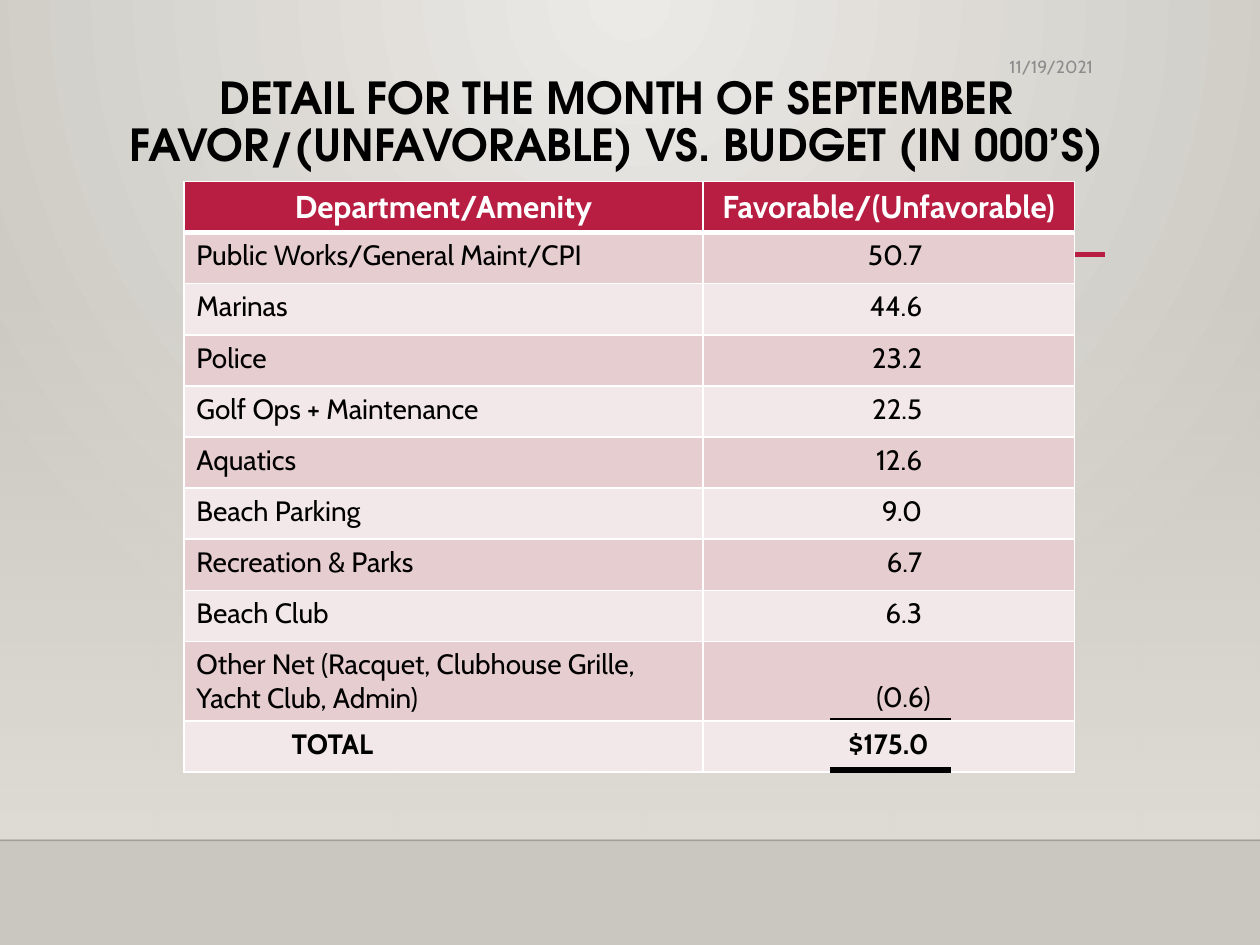
from lxml import etree
from pptx import Presentation
from pptx import util as u
from pptx.dml.color import RGBColor
from pptx.enum import shapes, text
from pptx.oxml.ns import qn

BLACK = RGBColor(0x00, 0x00, 0x00)
NEAR_BLACK = RGBColor(0x00, 0x00, 0x01)
WHITE = RGBColor(0xFF, 0xFF, 0xFF)
GREY = RGBColor(0x8C, 0x8C, 0x8C)
RED = RGBColor(0xB7, 0x1E, 0x42)
ROSE = RGBColor(0xE6, 0xCD, 0xCF)
PALE_ROSE = RGBColor(0xF3, 0xE8, 0xE9)
LIGHT = RGBColor(0xEC, 0xEA, 0xE7)
STONE = RGBColor(0xCA, 0xC7, 0xC1)
SAND = RGBColor(0xDF, 0xDB, 0xD5)

LEFT, CENTER, RIGHT = (text.PP_ALIGN.LEFT, text.PP_ALIGN.CENTER,
                       text.PP_ALIGN.RIGHT)
TOP, MIDDLE, BOTTOM = (text.MSO_ANCHOR.TOP, text.MSO_ANCHOR.MIDDLE,
                       text.MSO_ANCHOR.BOTTOM)

TITLE = ["DETAIL FOR THE MONTH OF SEPTEMBER",
         "FAVOR/(UNFAVORABLE) VS. BUDGET (IN 000’S)"]
HEADER = ["Department/Amenity", "Favorable/(Unfavorable)"]
DEPARTMENTS = [
    ("Public Works/General Maint/CPI", "50.7"),
    ("Marinas", "44.6"),
    ("Police", "23.2"),
    ("Golf Ops + Maintenance", "22.5"),
    ("Aquatics", "12.6"),
    ("Beach Parking", "9.0"),
    ("Recreation & Parks", "6.7"),
    ("Beach Club", "6.3"),
    ("Other Net (Racquet, Clubhouse Grille, Yacht Club, Admin)", "(0.6)"),
]
TOTAL = ("TOTAL", "$175.0")


def write(tf, content, size=16, color=BLACK, bold=False, font="Cabin",
          align=LEFT, spacing=None):
    lines = [content] if isinstance(content, str) else content
    for i, line in enumerate(lines):
        p = tf.paragraphs[0] if i == 0 else tf.add_paragraph()
        p.alignment = align
        p.space_before = u.Pt(0)
        if spacing:
            p.line_spacing = spacing
        r = p.add_run()
        r.text = line
        r.font.name, r.font.size, r.font.bold = font, u.Pt(size), bold
        r.font.color.rgb = color


def set_alpha(parent, percent):
    """Make the first RGB colour under parent partly transparent."""
    color = parent.find(".//" + qn("a:srgbClr"))
    etree.SubElement(color, qn("a:alpha")).set("val", str(percent * 1000))


def set_borders(cell, color, **widths):
    """Draw cell borders; widths are points keyed by L, R, T and B."""
    tc_pr = cell._tc.get_or_add_tcPr()
    for i, side in enumerate("LRTB"):
        ln = etree.Element(qn("a:ln" + side), w=str(u.Pt(widths.get(side, 1))))
        fill = etree.SubElement(ln, qn("a:solidFill"))
        etree.SubElement(fill, qn("a:srgbClr"), val=str(color))
        tc_pr.insert(i, ln)


class SlideBuilder:
    def __init__(self, s):
        self.s = s

    def gradient(self, fill, *colors):
        fill.gradient()
        for stop, color, position in zip(fill.gradient_stops, colors, (0, 1)):
            stop.color.rgb = color
            stop.position = position

    def background(self, inner, outer):
        """Radial gradient centred on the top edge."""
        self.gradient(self.s.background.fill, inner, outer)
        grad = self.s.element.find(".//" + qn("a:gradFill"))
        grad.remove(grad.find(qn("a:lin")))
        radial = etree.Element(qn("a:path"), path="circle")
        etree.SubElement(radial, qn("a:fillToRect"),
                         l="43000", t="0", r="43000", b="100000")
        grad.find(qn("a:gsLst")).addnext(radial)

    def fade(self, x, y, w, h, color):
        """Rectangle fading in from clear at the top."""
        sp = self.s.shapes.add_shape(shapes.MSO_SHAPE.RECTANGLE, u.Cm(x),
                                     u.Cm(y), u.Cm(w), u.Cm(h))
        sp.shadow.inherit = False
        sp.line.fill.background()
        self.gradient(sp.fill, color, color)
        sp.fill.gradient_angle = 270
        set_alpha(sp._element.spPr, 0)

    def rule(self, x1, x2, y, color, width, alpha=None):
        ln = self.s.shapes.add_connector(shapes.MSO_CONNECTOR.STRAIGHT,
                                         u.Cm(x1), u.Cm(y), u.Cm(x2), u.Cm(y))
        ln.line.color.rgb = color
        ln.line.width = u.Pt(width)
        sp_pr = ln._element.spPr
        if alpha is not None:
            set_alpha(sp_pr, alpha)
        etree.SubElement(sp_pr, qn("a:effectLst"))

    def title(self, x, y, w, h, lines):
        sp = self.s.shapes.title
        sp.left, sp.top, sp.width, sp.height = map(u.Cm, (x, y, w, h))
        tf = sp.text_frame
        tf.auto_size = text.MSO_AUTO_SIZE.NONE
        tf.vertical_anchor = BOTTOM
        write(tf, lines, size=25.2, bold=True, font="TeX Gyre Adventor",
              align=CENTER, spacing=0.9)

    def label(self, x, y, w, h, content, **fmt):
        sp = self.s.shapes.add_textbox(*map(u.Cm, (x, y, w, h)))
        tf = sp.text_frame
        tf.word_wrap = True
        tf.vertical_anchor = MIDDLE
        write(tf, content, **fmt)

    def table(self, x, y, widths, heights):
        frame = self.s.shapes.add_table(len(heights), len(widths), u.Cm(x),
                                        u.Cm(y), u.Cm(sum(widths)),
                                        u.Cm(sum(heights)))
        table = frame.table
        for col, w in zip(table.columns, widths):
            col.width = u.Cm(w)
        for row, h in zip(table.rows, heights):
            row.height = u.Cm(h)
        return table

    def cell(self, cell, content, fill, left=0.25, right=0.25, anchor=TOP,
             borders=None, **fmt):
        cell.fill.solid()
        cell.fill.fore_color.rgb = fill
        set_borders(cell, WHITE, **(borders or {}))
        cell.margin_left, cell.margin_right = u.Cm(left), u.Cm(right)
        cell.vertical_anchor = anchor
        write(cell.text_frame, content, **fmt)


def add_budget_table(b):
    heights = [1.03] * len(DEPARTMENTS) + [1.6, 1.02]
    table = b.table(3.71, 3.66, [10.46, 7.49], heights)
    for col, name in enumerate(HEADER):
        b.cell(table.cell(0, col), name, RED, borders={"B": 3}, size=18,
               color=WHITE, bold=True, align=CENTER)
    for row, (name, amount) in enumerate(DEPARTMENTS, start=1):
        fill = ROSE if row % 2 else PALE_ROSE
        borders = {"T": 3} if row == 1 else {}
        # A closing bracket hangs outside the column of digits.
        right = 2.9 if amount.endswith(")") else 3.07
        anchor = BOTTOM if amount.endswith(")") else TOP
        b.cell(table.cell(row, 0), name, fill, borders=borders)
        b.cell(table.cell(row, 1), amount, fill, right=right, anchor=anchor,
               borders=borders, align=RIGHT)
    last = len(heights) - 1
    b.cell(table.cell(last, 0), TOTAL[0], PALE_ROSE, left=2.17, bold=True)
    b.cell(table.cell(last, 1), TOTAL[1], PALE_ROSE, bold=True, align=CENTER)


def main():
    prs = Presentation()
    prs.slide_width, prs.slide_height = u.Cm(25.4), u.Cm(19.05)
    b = SlideBuilder(prs.slides.add_slide(prs.slide_layouts[5]))
    b.background(LIGHT, STONE)
    b.fade(0, 5.59, 25.4, 11.34, SAND)
    b.rule(0, 25.4, 16.94, NEAR_BLACK, 1, alpha=20)
    b.rule(4.01, 22.28, 5.13, RED, 2.5)
    b.title(2.01, 0.18, 20.83, 3.4, TITLE)
    b.label(15.7, 0.91, 6.58, 0.86, "11/19/2021", size=10, color=GREY,
            align=RIGHT)
    add_budget_table(b)
    for y, width in ((15.52, 3), (14.5, 1.25)):
        b.rule(16.74, 19.18, y, BLACK, width)
    prs.save("out.pptx")


if __name__ == "__main__":
    main()
